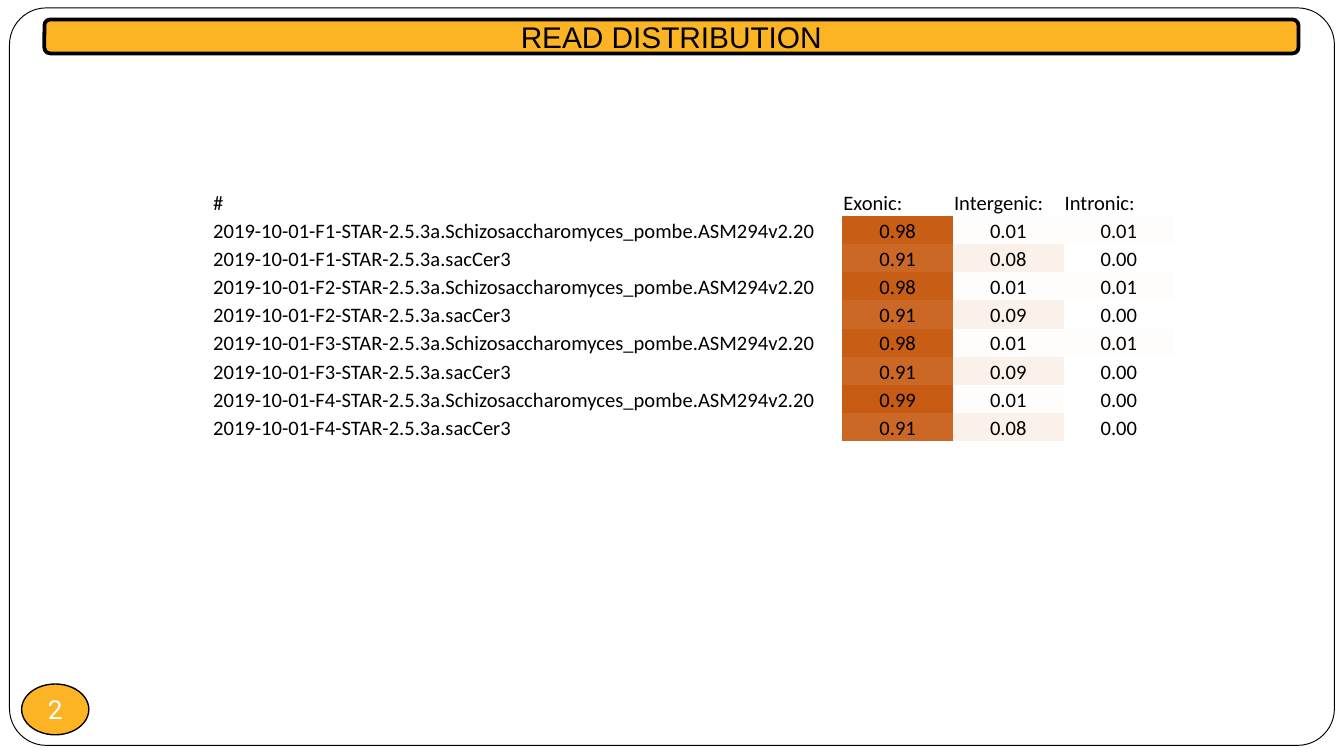
import pptx
import pptx.dml.color
import pptx.enum.shapes
import pptx.enum.text
import pptx.oxml.ns
import pptx.util

Cm = pptx.util.Cm
Pt = pptx.util.Pt
RGBColor = pptx.dml.color.RGBColor
Shape = pptx.enum.shapes.MSO_SHAPE
Align = pptx.enum.text.PP_ALIGN
Anchor = pptx.enum.text.MSO_ANCHOR

BLACK = RGBColor(0x00, 0x00, 0x00)
WHITE = RGBColor(0xFF, 0xFF, 0xFF)
AMBER = RGBColor(0xFC, 0xB4, 0x24)
DEEP_ORANGE = RGBColor(0xC7, 0x5B, 0x13)
DARK_ORANGE = RGBColor(0xC8, 0x5D, 0x16)
ORANGE = RGBColor(0xCB, 0x68, 0x26)
PALE_ORANGE = RGBColor(0xFB, 0xF1, 0xEB)
NEAR_WHITE = RGBColor(0xFF, 0xFD, 0xFC)

HEAT_COLORS = {
    "0.99": DEEP_ORANGE,
    "0.98": DARK_ORANGE,
    "0.91": ORANGE,
    "0.09": PALE_ORANGE,
    "0.08": PALE_ORANGE,
    "0.01": NEAR_WHITE,
    "0.00": WHITE,
}

NO_STYLE_NO_GRID = "{2D5ABB26-0587-4C30-8999-92F81FD0307C}"
HEADER = ("#", "Exonic:", "Intergenic:", "Intronic:")
GENOMES = ("Schizosaccharomyces_pombe.ASM294v2.20", "sacCer3")
FRACTIONS = (
    ("0.98", "0.01", "0.01"),
    ("0.91", "0.08", "0.00"),
    ("0.98", "0.01", "0.01"),
    ("0.91", "0.09", "0.00"),
    ("0.98", "0.01", "0.01"),
    ("0.91", "0.09", "0.00"),
    ("0.99", "0.01", "0.00"),
    ("0.91", "0.08", "0.00"),
)


def apply_format(target, values):
    for name, value in values.items():
        setattr(target, name, value)


class SlideBuilder:
    title_font = {"name": "Arial", "size": Pt(16)}
    number_font = {"name": "Roboto", "size": Pt(14)}
    table_font = {"name": "Calibri", "size": Pt(11)}
    number_frame = {
        "margin_left": 0,
        "margin_right": 0,
        "margin_top": 0,
        "margin_bottom": 0,
        "word_wrap": False,
    }
    cell_format = {
        "margin_left": Cm(0.02),
        "margin_right": Cm(0.02),
        "margin_top": Cm(0.02),
        "margin_bottom": 0,
        "vertical_anchor": Anchor.BOTTOM,
    }

    def __init__(self, slide):
        self.slide = slide

    def add_text(self, text_frame, text, font, color, alignment):
        paragraph = text_frame.paragraphs[0]
        paragraph.alignment = alignment
        run = paragraph.add_run()
        run.text = text
        apply_format(run.font, font)
        run.font.color.rgb = color

    def add_shape(self, kind, box, fill, line_width, corner=None):
        shape = self.slide.shapes.add_shape(kind, *map(Cm, box))
        shape.shadow.inherit = False
        shape.fill.solid()
        shape.fill.fore_color.rgb = fill
        shape.line.color.rgb = BLACK
        shape.line.width = Pt(line_width)
        if corner is not None:
            shape.adjustments[0] = corner
        return shape

    def add_label(self, kind, box, line_width, text, font, color, frame_format):
        shape = self.add_shape(kind, box, AMBER, line_width)
        shape.text_frame.vertical_anchor = Anchor.MIDDLE
        apply_format(shape.text_frame, frame_format)
        self.add_text(shape.text_frame, text, font, color, Align.CENTER)

    def add_table(self, left, top, widths, row_height, rows):
        frame = self.slide.shapes.add_table(
            len(rows), len(widths), Cm(left), Cm(top),
            Cm(sum(widths)), Cm(row_height * len(rows)),
        )
        for style in frame.element.iter(pptx.oxml.ns.qn("a:tableStyleId")):
            style.text = NO_STYLE_NO_GRID
        table = frame.table
        apply_format(table, {"first_row": False, "horz_banding": False})
        for column, width in zip(table.columns, widths):
            column.width = Cm(width)
        for row, texts in zip(table.rows, rows):
            row.height = Cm(row_height)
            for cell, text in zip(row.cells, texts):
                self.fill_cell(cell, text)

    def fill_cell(self, cell, text):
        apply_format(cell, self.cell_format)
        alignment = Align.LEFT
        if text in HEAT_COLORS:
            alignment = Align.CENTER
            cell.fill.solid()
            cell.fill.fore_color.rgb = HEAT_COLORS[text]
        else:
            cell.fill.background()
        self.add_text(cell.text_frame, text, self.table_font, BLACK, alignment)


def main():
    presentation = pptx.Presentation()
    presentation.slide_width = Cm(25.4)
    presentation.slide_height = Cm(14.29)
    builder = SlideBuilder(presentation.slides.add_slide(presentation.slide_layouts[6]))

    builder.add_shape(
        Shape.ROUNDED_RECTANGLE, (0.18, 0.15, 25.04, 13.94), WHITE, 0.5, corner=0.05
    )
    builder.add_label(
        Shape.OVAL, (0.41, 12.93, 1.27, 0.96), 0.75,
        "2", builder.number_font, WHITE, builder.number_frame,
    )
    builder.add_label(
        Shape.ROUNDED_RECTANGLE, (0.84, 0.37, 23.7, 0.64), 2,
        "READ DISTRIBUTION", builder.title_font, BLACK, {"word_wrap": True},
    )

    samples = [
        f"2019-10-01-F{number}-STAR-2.5.3a.{genome}"
        for number in range(1, 5)
        for genome in GENOMES
    ]
    rows = [HEADER] + [(sample, *values) for sample, values in zip(samples, FRACTIONS)]
    builder.add_table(4.01, 3.56, (11.91, 2.09, 2.09, 2.09), 0.53, rows)

    presentation.save("out.pptx")


if __name__ == "__main__":
    main()
